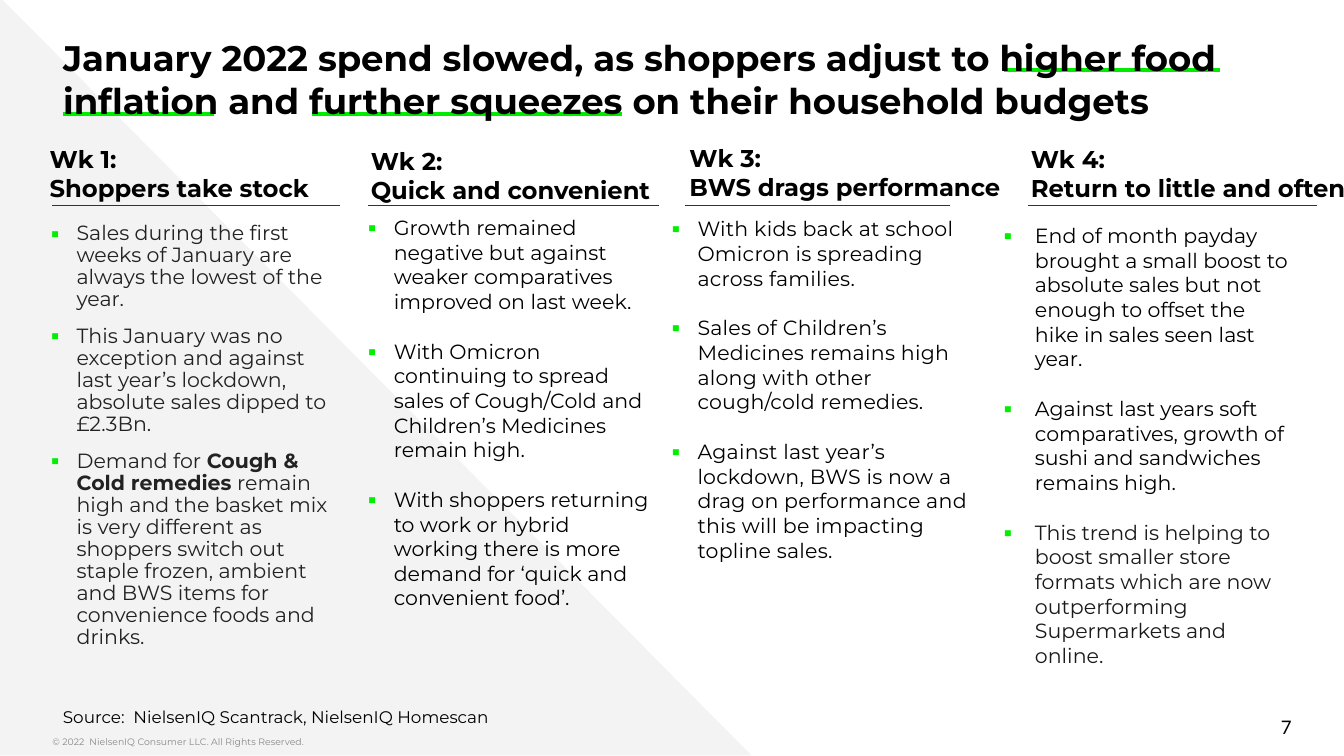
from dataclasses import dataclass

from lxml import etree
from pptx import Presentation
from pptx.dml.color import RGBColor
from pptx.enum.shapes import MSO_CONNECTOR, MSO_SHAPE
from pptx.enum.text import MSO_ANCHOR, PP_ALIGN
from pptx.oxml.ns import qn
from pptx.util import Emu, Pt

EMU_PER_PX = 9144  # 100 px to the inch
STRAIGHT = MSO_CONNECTOR.STRAIGHT
RIGHT_TRIANGLE = MSO_SHAPE.RIGHT_TRIANGLE
TOP, MIDDLE, BOTTOM = MSO_ANCHOR.TOP, MSO_ANCHOR.MIDDLE, MSO_ANCHOR.BOTTOM
LEFT, RIGHT = PP_ALIGN.LEFT, PP_ALIGN.RIGHT

BLACK, GREEN, BULLET_GREEN, RULE_GREY = "000000", "00EB00", "00F000", "333333"
RULE_Y = 153


def px(length):
    return Emu(length * EMU_PER_PX)


def color(hex_string):
    return RGBColor.from_string(hex_string)


@dataclass
class Column:
    heading: tuple
    heading_box: tuple
    rule: tuple
    body_box: tuple
    points: tuple
    colors: tuple = (BLACK, BLACK, BLACK)
    indent: int = 19
    hanging: int = 19
    line_spacing: float = 0
    gap: float = 13.4
    tracking: int = 0  # hundredths of a point


COLUMNS = (
    Column(
        heading=("Wk 1:", "Shoppers take stock"),
        heading_box=(37, 118, 218, 43),
        rule=(39, 253),
        body_box=(-12, 161, 266, 309),
        points=(
            "Sales during the first weeks of January are always the lowest of the year.",
            "This January was no exception and against last year’s lockdown, "
            "absolute sales dipped to £2.3Bn.",
            "Demand for **Cough & Cold remedies** remain high and the basket mix is very "
            "different as shoppers switch out staple frozen, ambient and BWS items for "
            "convenience foods and drinks.",
        ),
        colors=("222222",) * 3,
        indent=69,
        line_spacing=11.8,
        gap=8,
    ),
    Column(
        heading=("Wk 2:", "Quick and convenient"),
        heading_box=(276, 119, 254, 43),
        rule=(274, 490),
        body_box=(273, 155, 215, 330),
        points=(
            "Growth remained negative but against weaker comparatives improved on last week.",
            "With Omicron continuing to spread sales of Cough/Cold and Children’s "
            "Medicines remain high.",
            "With shoppers returning to work or hybrid working there is more demand for "
            "‘quick and convenient food’.",
        ),
        indent=20,
    ),
    Column(
        heading=("Wk 3:", "BWS drags performance"),
        heading_box=(513, 117, 234, 43),
        rule=(510, 707),
        body_box=(500, 156, 234, 358),
        points=(
            "With kids back at school Omicron is spreading across families.",
            "Sales of Children’s Medicines remains high along with other cough/cold remedies.",
            "Against last year’s lockdown, BWS is now a drag on performance and this will "
            "be impacting topline sales.",
        ),
        tracking=10,
    ),
    Column(
        heading=("Wk 4:", "Return to little and often"),
        heading_box=(767, 118, 254, 43),
        rule=(765, 980),
        body_box=(745, 161, 215, 358),
        points=(
            "End of month payday brought a small boost to absolute sales but not enough to "
            "offset the hike in sales seen last year.",
            "Against last years soft comparatives, growth of sushi and sandwiches remains high.",
            "This trend is helping to boost smaller store formats which are now "
            "outperforming Supermarkets and online.",
        ),
        colors=(BLACK, BLACK, "1A1A1A"),
        indent=25,
        hanging=23,
    ),
)


class SlideBuilder:
    def __init__(self, slide, font="Montserrat"):
        self.slide = slide
        self.font = font

    def triangle(self, left, top, width, height, fill):
        shape = self.slide.shapes.add_shape(
            RIGHT_TRIANGLE, px(left), px(top), px(width), px(height))
        shape.shadow.inherit = False
        shape.fill.solid()
        shape.fill.fore_color.rgb = color(fill)
        shape.line.fill.background()

    def rule(self, start, end, y, hex_string, weight):
        line = self.slide.shapes.add_connector(STRAIGHT, px(start), px(y), px(end), px(y))
        line.line.color.rgb = color(hex_string)
        line.line.width = Pt(weight)
        etree.SubElement(line._element.spPr, qn("a:effectLst"))

    def frame(self, bounds, inset=(0, 5), anchor=TOP):
        """Add an empty text box and return its text frame."""
        box = self.slide.shapes.add_textbox(*map(px, bounds))
        frame = box.text_frame
        frame.word_wrap = True
        frame.vertical_anchor = anchor
        frame.margin_left = frame.margin_right = px(inset[0])
        frame.margin_top = frame.margin_bottom = px(inset[1])
        return frame

    def style(self, para, size, hex_string=BLACK, bold=False, font=None):
        para.font.size = Pt(size)
        para.font.name = font or self.font
        para.font.bold = bold
        para.font.color.rgb = color(hex_string)

    def text(self, bounds, lines, size, hex_string=BLACK, bold=False, font=None,
             inset=(0, 5), anchor=TOP, align=LEFT):
        frame = self.frame(bounds, inset, anchor)
        frame.text = "\n".join(lines)
        for para in frame.paragraphs:
            para.alignment = align
            self.style(para, size, hex_string, bold, font)

    def bullet(self, para, indent, hanging):
        properties = para._p.get_or_add_pPr()
        properties.set("marL", str(px(indent)))
        properties.set("indent", str(px(-hanging)))
        bullet_color = etree.SubElement(properties, qn("a:buClr"))
        etree.SubElement(bullet_color, qn("a:srgbClr"), val=BULLET_GREEN)
        etree.SubElement(properties, qn("a:buFont"), typeface=self.font)
        etree.SubElement(properties, qn("a:buChar"), char="▪")

    def points(self, column):
        """Add a bulleted list; text between ** marks is bold."""
        frame = self.frame(column.body_box)
        for index, (point, hex_string) in enumerate(zip(column.points, column.colors)):
            para = frame.add_paragraph() if index else frame.paragraphs[0]
            if column.line_spacing:
                para.line_spacing = Pt(column.line_spacing)
            para.space_after = Pt(column.gap)
            self.bullet(para, column.indent, column.hanging)
            self.style(para, 11, hex_string)
            for part, words in enumerate(point.split("**")):
                span = para.add_run()
                span.text = words
                if part % 2:
                    span.font.bold = True
                if column.tracking:
                    span._r.get_or_add_rPr().set("spc", str(column.tracking))

    def column(self, column):
        self.rule(*column.rule, RULE_Y, RULE_GREY, 0.75)
        self.text(column.heading_box, column.heading, 13, bold=True,
                  inset=(0, 10), anchor=BOTTOM)
        self.points(column)


def main():
    deck = Presentation()
    deck.slide_width = px(1000)
    deck.slide_height = deck.slide_width * 9 // 16
    page = SlideBuilder(deck.slides.add_slide(deck.slide_layouts[6]))

    page.triangle(0, -2, 559, 564, "F3F3F3")
    page.text((39, 543, 554, 20),
              ["© 2022  NielsenIQ Consumer LLC. All Rights Reserved."], 5, "888888")
    page.text((736, 526, 225, 30), ["7"], 10, font="Lato", anchor=MIDDLE, align=RIGHT)

    for start, end, y in ((747, 908, 52), (47, 159, 85), (232, 463, 85)):
        page.rule(start, end, y, GREEN, 2.25)
    page.text((47, 17, 970, 43),
              ["January 2022 spend slowed, as shoppers adjust to higher food inflation "
               "and further squeezes on their household budgets"],
              19, bold=True, inset=(0, 10))

    for column in COLUMNS:
        page.column(column)
    page.text((37, 521, 516, 25), ["Source:  NielsenIQ Scantrack, NielsenIQ Homescan"],
              9, inset=(10, 5))
    deck.save("out.pptx")


if __name__ == "__main__":
    main()
